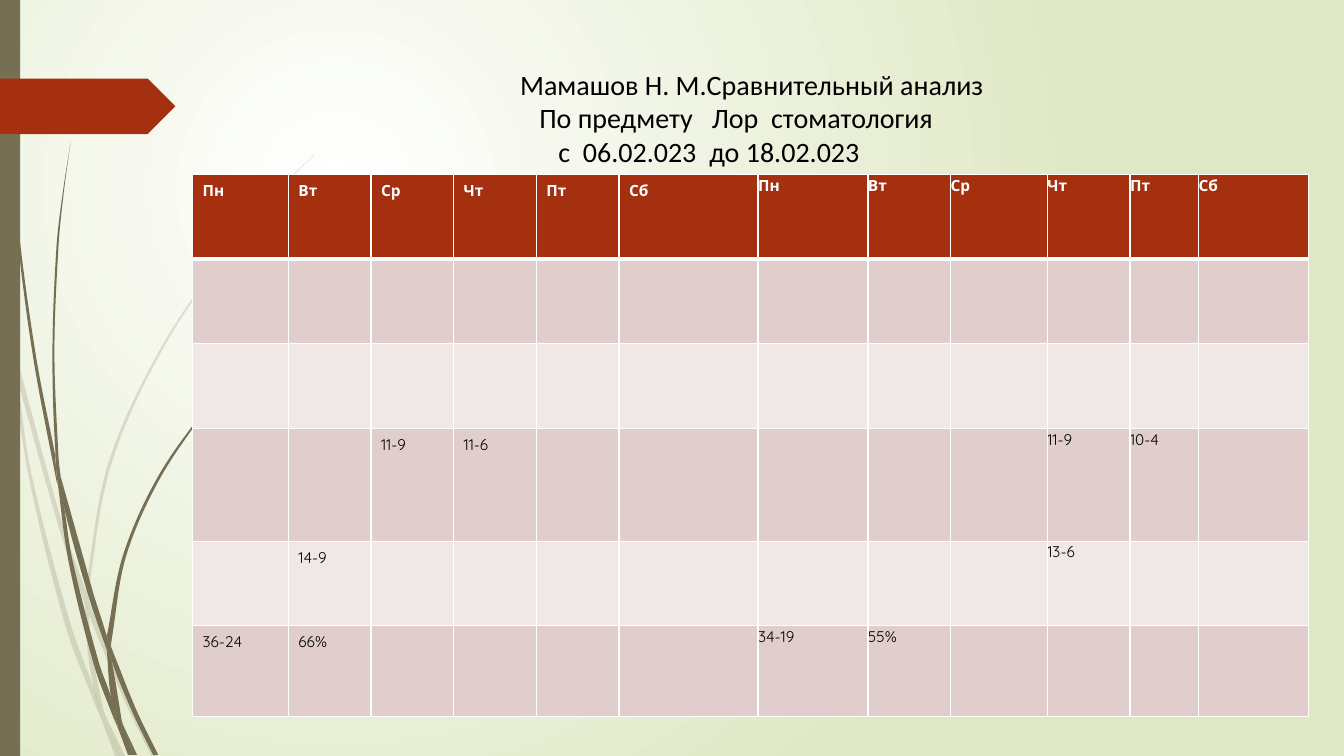
import itertools
import math
import lxml.etree
import pptx
import pptx.dml.color
import pptx.enum.shapes
import pptx.enum.text
import pptx.oxml.ns
import pptx.util

PX = 9144
WIDE, HIGH = 1333, 750
HUES = {
    "white": "FFFFFF", "black": "000000", "lime": "DFE8C4", "olive": "766F54",
    "rust": "A53010", "rose": "E1CDCC", "blush": "F0E8E7",
}
FAINT = [
    ([(11, 350), (9, 322), (0, 282)], [(0, 299), (10, 344)]),
    ([(17, 376), (58, 522), (84, 599)], [(85, 586), (62, 520), (14, 345)]),
    ([(88, 596), (92, 607), (127, 692), (155, 750)], [(150, 750), (123, 694), (88, 610)]),
    ([(119, 750), (124, 750)], [(105, 711)]),
    ([(101, 714), (93, 683), (70, 619), (31, 469), (17, 376), (11, 350)],
     [(11, 350), (28, 470), (65, 621), (92, 693), (101, 714)]),
    ([(84, 599), (87, 646), (93, 683), (96, 692), (105, 711)],
     [(103, 706), (91, 646), (88, 610), (88, 608)]),
    ([(88, 596), (88, 584), (110, 462), (160, 349), (229, 245), (268, 198), (290, 175),
      (312, 154)],
     [(312, 153), (289, 175), (268, 197), (228, 244), (158, 348), (107, 461), (85, 584),
      (85, 586)]),
    ([(101, 714), (114, 750)], [(119, 750)]),
    ([(88, 608), (88, 610), (88, 596)], [(85, 586), (84, 599)]),
    ([(93, 683), (99, 707), (101, 714), (119, 750)], [(105, 711), (96, 692)]),
]
DARK = [
    ([(3, 0), (4, 48), (7, 110), (17, 233), (33, 355), (56, 477), (57, 481)],
     [(55, 457), (55, 453), (36, 355), (19, 232), (8, 109), (5, 48), (4, 0)]),
    ([(60, 472), (64, 505), (88, 592), (106, 645)], [(106, 633), (106, 631), (93, 590)]),
    ([(110, 641), (111, 656), (132, 708), (152, 749)], [(157, 749), (136, 706), (113, 649)]),
    ([(57, 477), (68, 557), (93, 659), (111, 708), (117, 722)],
     [(116, 717), (110, 691), (98, 657), (72, 556), (64, 505)]),
    ([(70, 141), (62, 193), (56, 245), (52, 349), (55, 449), (60, 472)],
     [(60, 472), (58, 453), (54, 349), (58, 245), (63, 193), (70, 141)]),
    ([(122, 719), (133, 749)], [(136, 749)]),
    ([(55, 449), (55, 453), (57, 477), (64, 505)], [(60, 472)]),
    ([(106, 631), (122, 551), (156, 474), (204, 405), (231, 373), (245, 358), (260, 344)],
     [(261, 344), (245, 359), (231, 374), (205, 406), (158, 476), (125, 552), (111, 633),
      (110, 641)]),
    ([(117, 722), (127, 749)], [(131, 749)]),
    ([(106, 645), (110, 691), (116, 706), (122, 719)], [(121, 716), (111, 656), (109, 651)]),
    ([(106, 631), (106, 645), (109, 651), (111, 656)], [(110, 641)]),
    ([(110, 691), (116, 717), (117, 722), (130, 749)], [(133, 749), (122, 719), (116, 706)]),
]
TITLE = [
    [("Мамашов Н. М.Сравнительный анализ", 0)],
    [("По предмету", 3), ("Лор", 2), ("стоматология", 0)],
    [("с", 2), ("06.02.023", 2), ("до 18.02.023", 0)],
]
DAYS = ["Пн", "Вт", "Ср", "Чт", "Пт", "Сб"]
MARKS = {
    (3, 2): "11-9", (3, 3): "11-6", (3, 9): "11-9", (3, 10): "10-4",
    (4, 1): "14-9", (4, 9): "13-6",
    (5, 0): "36-24", (5, 1): "66%", (5, 6): "34-19", (5, 7): "55%",
}
COLS = [95, 82, 82, 82, 82, 138, 109, 82, 96, 82, 68, 109]
ROWS = [84, 84, 84, 112, 84, 90]


def hue(name):
    return pptx.dml.color.RGBColor.from_string(HUES[name])


def node(root, tag, **attrs):
    item = lxml.etree.SubElement(root, pptx.oxml.ns.qn("a:" + tag))
    for key, val in attrs.items():
        item.set(key, str(val))
    return item


def paint(shape, name, fade=None):
    shape.shadow.inherit = False
    shape.fill.solid()
    shape.fill.fore_color.rgb = hue(name)
    shape.line.fill.background()
    if fade:
        tint = shape.element.xpath("./p:spPr/a:solidFill/a:srgbClr")[0]
        node(tint, "alpha", val=fade * 1000)


def write(para, text, font, size, color, bold=False):
    run = para.add_run()
    run.text = text
    run.font.name = font
    run.font.size = pptx.util.Pt(size)
    run.font.color.rgb = hue(color)
    run.font.bold = bold
    return run


def glow(slide):
    fill = slide.background.fill
    fill.gradient()
    for stop, name in zip(fill.gradient_stops, ["white", "lime"]):
        stop.color.rgb = hue(name)
    grad = slide.element.xpath(".//a:gradFill")[0]
    for old in grad.xpath("./a:lin"):
        grad.remove(old)
    ring = node(grad, "path", path="circle")
    node(ring, "fillToRect", l=50000, t=50000, r=100000, b=100000)


def bends(side):
    last = len(side) - 1

    def lean(i):
        a, b = side[max(i - 1, 0)], side[min(i + 1, last)]
        span = math.dist(a, side[i]) + math.dist(side[i], b)
        return (b[0] - a[0]) / span, (b[1] - a[1]) / span

    for i, (a, b) in enumerate(itertools.pairwise(side)):
        reach = math.dist(a, b) / 3
        (ux, uy), (vx, vy) = lean(i), lean(i + 1)
        yield [(a[0] + ux * reach, a[1] + uy * reach),
               (b[0] - vx * reach, b[1] - vy * reach), b]


def blade(slide, left, top, near, far, fade):
    dots = near + far
    pen = slide.shapes.build_freeform(left + near[0][0], top + near[0][1], scale=PX)
    pen.add_line_segments([(left + x, top + y) for x, y in dots[1:]], close=True)
    shape = pen.convert_to_shape()
    west, north = min(x for x, y in dots), min(y for x, y in dots)
    lines = shape.element.xpath(".//a:lnTo")
    turns = [*bends(near), None, *bends(far)]
    for line, turn in zip(lines, turns):
        if turn:
            arc = node(line.getparent(), "cubicBezTo")
            for x, y in turn:
                node(arc, "pt", x=round((x - west) * 100), y=round((y - north) * 100))
            line.getparent().replace(line, arc)
    track = shape.element.xpath(".//a:pathLst/a:path")[0]
    for spot in track.xpath("./a:moveTo/a:pt | ./a:lnTo/a:pt"):
        for axis in "xy":
            spot.set(axis, str(int(spot.get(axis)) * 100))
    for size in "wh":
        track.set(size, str(int(track.get(size)) * 100))
    paint(shape, "olive", fade)


def grass(slide, left, top):
    for group, fade in [(FAINT, 20), (DARK, None)]:
        for near, far in group:
            blade(slide, left, top, near, far, fade)


def block(slide, kind, name, left, top, width, height):
    box = [n * PX for n in (left, top, width, height)]
    paint(slide.shapes.add_shape(kind, *box), name)


def edge(slide, left, top, height):
    kinds = pptx.enum.shapes.MSO_SHAPE
    block(slide, kinds.RECTANGLE, "olive", left, top, 20, height)
    block(slide, kinds.PENTAGON, "rust", left, top + 78, 174, 55)


def title(slide, left, top, width, height):
    box = slide.shapes.add_textbox(*[n * PX for n in (left, top, width, height)])
    frame = box.text_frame
    frame.word_wrap = True
    frame.auto_size = pptx.enum.text.MSO_AUTO_SIZE.SHAPE_TO_FIT_TEXT
    frame.vertical_anchor = pptx.enum.text.MSO_ANCHOR.MIDDLE
    for i, parts in enumerate(TITLE):
        para = frame.add_paragraph() if i else frame.paragraphs[0]
        props = para._p.get_or_add_pPr()
        props.set("marL", "0")
        props.set("indent", str((301 + 19 * i) * PX))
        for text, gap in parts:
            write(para, text, "Calibri", 20, "black")
            if gap:
                space = write(para, " ", "Calibri", 20, "black")
                space._r.get_or_add_rPr().set("spc", str(450 * (gap - 1)))


def rule(cell, row):
    props = cell._tc.get_or_add_tcPr()
    for side in "LRTB":
        thick = (row, side) in [(0, "B"), (1, "T")]
        line = node(props, "ln" + side, w=12700 * (3 if thick else 1))
        node(node(line, "solidFill"), "srgbClr", val=HUES["white"])


def grid(slide, left, top):
    size = [n * PX for n in (left, top, sum(COLS), sum(ROWS))]
    table = slide.shapes.add_table(len(ROWS), len(COLS), *size).table
    table.first_row = table.horz_banding = False
    for col, width in zip(table.columns, COLS):
        col.width = width * PX
    for row, height in zip(table.rows, ROWS):
        row.height = height * PX
    texts = {(0, c): day for c, day in enumerate(DAYS * 2)} | MARKS
    for r, c in itertools.product(range(len(ROWS)), range(len(COLS))):
        cell = table.cell(r, c)
        rule(cell, r)
        cell.fill.solid()
        cell.fill.fore_color.rgb = hue("rust" if r == 0 else "rose" if r % 2 else "blush")
        if c >= len(DAYS):
            cell.margin_left = cell.margin_right = cell.margin_top = cell.margin_bottom = 0
        if (r, c) in texts:
            para = cell.text_frame.paragraphs[0]
            para.line_spacing = 1.07
            write(para, texts[r, c], "Quicksand", 11, "black" if r else "white", r == 0)


def main():
    deck = pptx.Presentation()
    deck.slide_width, deck.slide_height = WIDE * PX, HIGH * PX
    slide = deck.slides.add_slide(deck.slide_layouts[6])
    glow(slide)
    grass(slide, 0, 0)
    edge(slide, 0, 0, HIGH)
    grid(slide, 191, 173)
    title(slide, 205, 61, 1071, 111)
    deck.save("out.pptx")


if __name__ == "__main__":
    main()
